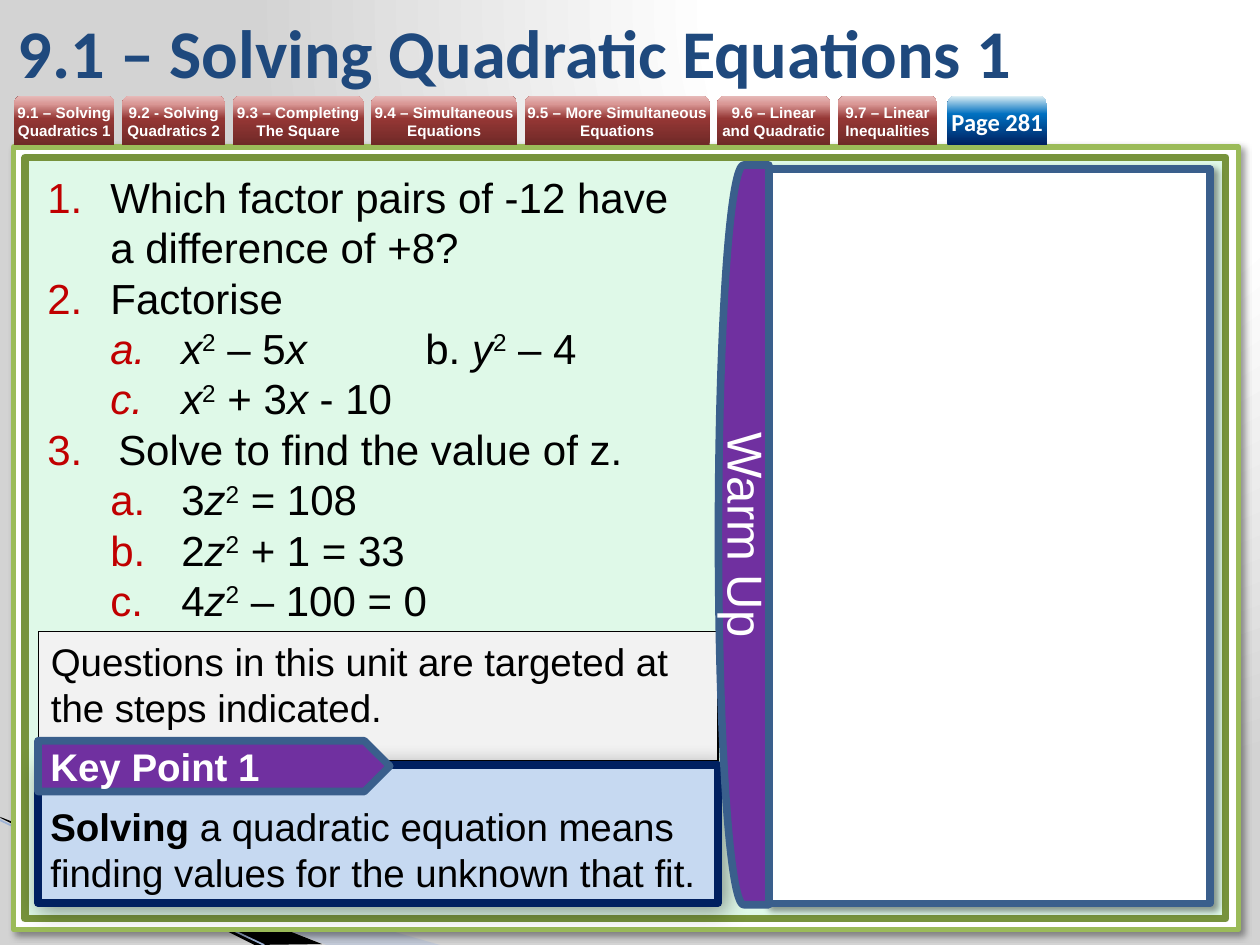
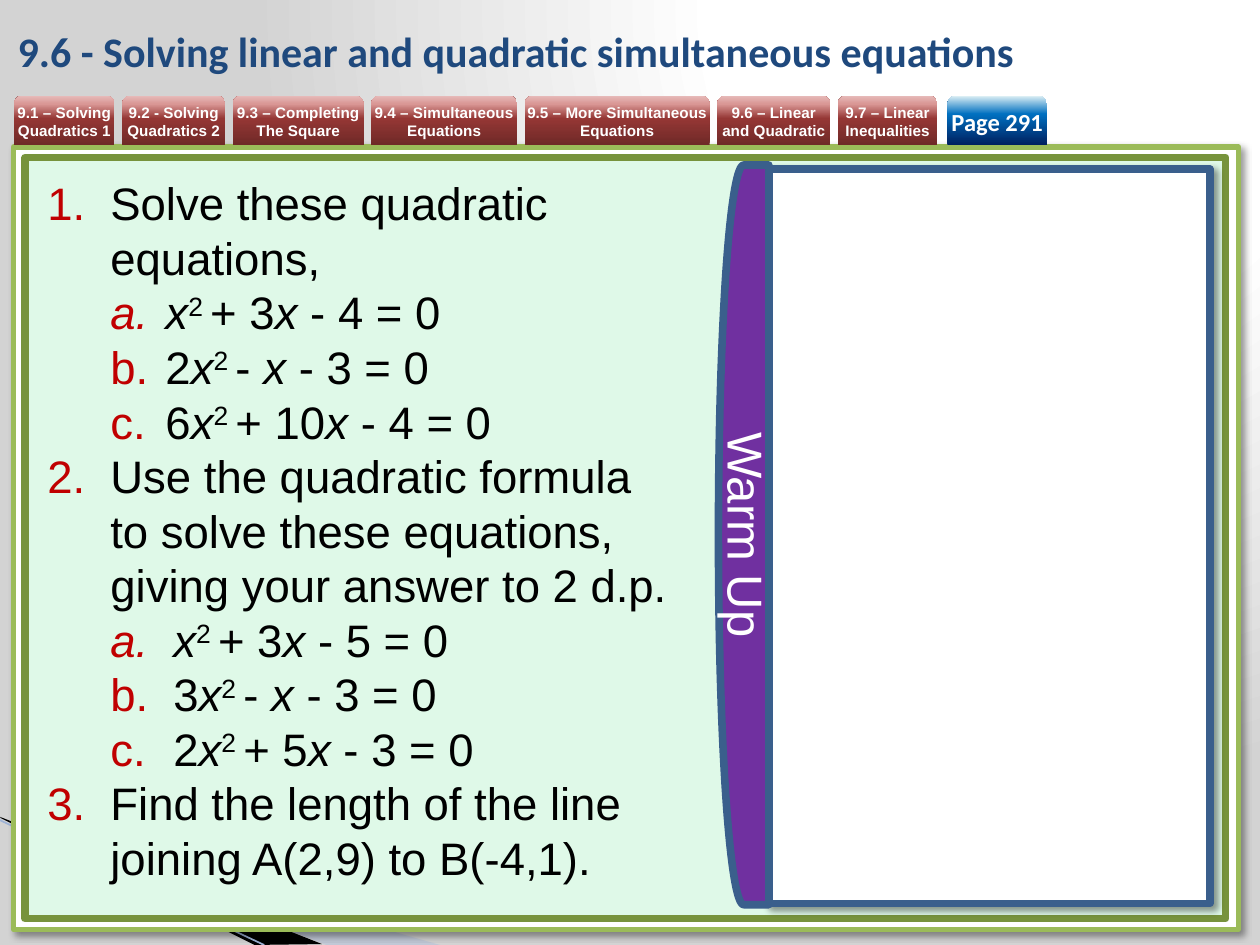
import dataclasses

import lxml.etree
import pptx
import pptx.dml.color
import pptx.enum.shapes
import pptx.enum.text
import pptx.oxml.ns
import pptx.util

Pt = pptx.util.Pt
Preset = pptx.enum.shapes.MSO_SHAPE
Align = pptx.enum.text.PP_ALIGN
Anchor = pptx.enum.text.MSO_ANCHOR
qn = pptx.oxml.ns.qn


@dataclasses.dataclass(frozen=True)
class Theme:
    body_font: str = "Arial"
    title_font: str = "Calibri"
    black: str = "000000"
    white: str = "FFFFFF"
    title: str = "1F497D"
    number: str = "C00000"
    panel_edge: str = "9BBB59"
    board: str = "DFF9E8"
    board_edge: str = "77933C"
    purple: str = "7030A0"
    steel: str = "3A5F8C"
    note: str = "F2F2F2"
    key: str = "C6D9F1"
    navy: str = "002060"
    sweep: str = "A7B9DB"
    sweep_edge: str = "9EB3D6"
    backdrop: tuple = ((0, "FFFFFF"), (40, "FFFFFF"), (100, "D3D3D3"))
    red_tab: tuple = ((0, "6F2927"), (54, "953735"), (83, "D99694"), (100, "E6B9B8"))
    blue_tab: tuple = ((0, "002060"), (63, "0070C0"), (100, "DBEEF4"))
    tab_size: float = 8.7
    page_size: float = 14
    note_size: float = 22
    banner_size: float = 28
    thick: float = 4.33


LESSON_TABS = (
    ("9.1 – Solving Quadratics 1", 57.6),
    ("9.2 - Solving Quadratics 2", 59),
    ("9.3 – Completing The Square", 74.9),
    ("9.4 – Simultaneous Equations", 83.5),
    ("9.5 – More Simultaneous Equations", 105.8),
    ("9.6 – Linear and Quadratic", 64.8),
    ("9.7 – Linear Inequalities", 56.9),
)
TAB_LEFT, TAB_TOP, TAB_HEIGHT, TAB_GAP = 8, 54.8, 28, 4.2
PAGE_TAB_LEFT, PAGE_TAB_WIDTH = 541.4, 56.9


def rgb(value):
    return pptx.dml.color.RGBColor.from_string(value)


def child(parent, tag, **attributes):
    values = {name: str(value) for name, value in attributes.items()}
    return lxml.etree.SubElement(parent, qn(tag), values)


def gradient(parent, stops):
    fill = lxml.etree.Element(qn("a:gradFill"), rotWithShape="1")
    stop_list = child(fill, "a:gsLst")
    for position, color in stops:
        stop = child(stop_list, "a:gs", pos=position * 1000)
        child(stop, "a:srgbClr", val=color)
    parent.replace(parent.find(qn("a:solidFill")), fill)
    return fill


class Deck:
    def __init__(self, theme):
        self.theme = theme
        self.presentation = pptx.Presentation()
        self.presentation.slide_width = Pt(720)
        self.presentation.slide_height = Pt(540)
        self.slide = None

    def new_slide(self):
        layout = self.presentation.slide_layouts[6]
        self.slide = self.presentation.slides.add_slide(layout)
        self.slide.background.fill.solid()
        background = next(self.slide.element.iter(qn("p:bgPr")))
        shade = child(gradient(background, self.theme.backdrop), "a:path", path="circle")
        child(shade, "a:fillToRect", l=65000, b=98000)

    def shape(self, preset, box, fill, edge=None, width=None, blur=None):
        shape = self.slide.shapes.add_shape(preset, *map(Pt, box))
        self.paint(shape, fill, edge, width)
        if blur:
            effects = shape._element.spPr.find(qn("a:effectLst"))
            shadow = child(effects, "a:outerShdw", blurRad=Pt(blur), dist=Pt(3),
                           dir=45 * 60000, algn="tl", rotWithShape=0)
            child(child(shadow, "a:srgbClr", val=self.theme.black), "a:alpha", val=40000)
        return shape

    def paint(self, shape, fill, edge=None, width=None):
        shape.shadow.inherit = False
        shape.fill.solid()
        if isinstance(fill, str):
            shape.fill.fore_color.rgb = rgb(fill)
        else:
            shade = gradient(shape._element.spPr, fill)
            child(shade, "a:lin", ang=270 * 60000, scaled=0)
        if edge:
            shape.line.color.rgb = rgb(edge)
            shape.line.width = Pt(width)
            child(shape._element.spPr.find(qn("a:ln")), "a:round")
        else:
            shape.line.fill.background()

    def polygon(self, points, fill, opacity=None):
        start, *others = [(Pt(x), Pt(y)) for x, y in points]
        builder = self.slide.shapes.build_freeform(*start)
        builder.add_line_segments(others, close=True)
        shape = builder.convert_to_shape()
        self.paint(shape, fill)
        if opacity:
            color = shape._element.spPr.find(qn("a:solidFill"))[0]
            child(color, "a:alpha", val=opacity * 1000)

    def line(self, start, end, color, width):
        connector = self.slide.shapes.add_connector(
            pptx.enum.shapes.MSO_CONNECTOR.STRAIGHT, *map(Pt, start + end))
        connector.line.color.rgb = rgb(color)
        connector.line.width = Pt(width)
        child(connector._element.spPr, "a:effectLst")

    def text_box(self, box):
        shape = self.slide.shapes.add_textbox(*map(Pt, box))
        shape.text_frame.word_wrap = True
        return shape

    def first_paragraph(self, shape, align=Align.LEFT, anchor=Anchor.MIDDLE, insets=None):
        frame = shape.text_frame
        frame.vertical_anchor = anchor
        if insets:
            (frame.margin_left, frame.margin_top,
             frame.margin_right, frame.margin_bottom) = map(Pt, insets)
        paragraph = frame.paragraphs[0]
        paragraph.alignment = align
        return paragraph

    def runs(self, paragraph, markup, size, color, bold=False, font=None):
        for italic, piece in enumerate(markup.split("*")):
            for raised, text in enumerate(piece.split("^")):
                if not text:
                    continue
                run = paragraph.add_run()
                run.text = text
                run.font.name = font or self.theme.body_font
                run.font.size = Pt(size)
                run.font.color.rgb = rgb(color)
                run.font.bold = bold
                run.font.italic = bool(italic % 2)
                if raised % 2:
                    run._r.get_or_add_rPr().set("baseline", "30000")

    def tab(self, left, width, fill, text, size, font=None, spacing=None):
        shape = self.shape(Preset.ROUND_2_SAME_RECTANGLE,
                           (left, TAB_TOP, width, TAB_HEIGHT), fill)
        paragraph = self.first_paragraph(shape, Align.CENTER, insets=(0, 0, 0, 0))
        if spacing:
            paragraph.line_spacing = Pt(spacing)
        self.runs(paragraph, text, size, self.theme.white, True, font)

    def frame(self, title, title_size, page):
        theme = self.theme
        self.new_slide()
        self.polygon([(0, 468), (251.5, 540), (186.5, 540), (0, 467.5)], theme.sweep, 40)
        self.polygon([(0, 466.8), (184, 539.5), (145.5, 540), (0.5, 467.5)], theme.black)
        self.line((0, 468.7), (151, 540), theme.sweep_edge, 0.95)
        self.shape(Preset.RECTANGLE, (7.8, 84, 700, 447), theme.white, theme.panel_edge, 3, 4)
        self.shape(Preset.RECTANGLE, (14.4, 90, 686, 435), theme.board,
                   theme.board_edge, theme.thick)
        self.shape(Preset.RECTANGLE, (439.4, 96.6, 252, 419.6), theme.white,
                   theme.steel, theme.thick, 4)
        left = TAB_LEFT
        for text, width in LESSON_TABS:
            self.tab(left, width, theme.red_tab, text, theme.tab_size, spacing=10)
            left += width + TAB_GAP
        self.tab(PAGE_TAB_LEFT, PAGE_TAB_WIDTH, theme.blue_tab, f"Page {page}",
                 theme.page_size, theme.title_font)
        heading = self.first_paragraph(self.text_box((3, 3.6, 595.5, 51)))
        self.runs(heading, title, title_size, theme.title, True, theme.title_font)

    def questions(self, box, size, tab_stops, items):
        shape = self.text_box(box)
        frame = shape.text_frame
        frame.auto_size = pptx.enum.text.MSO_AUTO_SIZE.SHAPE_TO_FIT_TEXT
        for index, (level, margin, hanging, markup, *start) in enumerate(items):
            paragraph = frame.add_paragraph() if index else frame.paragraphs[0]
            paragraph.level = level
            properties = paragraph._p.get_or_add_pPr()
            properties.set("marL", str(Pt(margin)))
            properties.set("indent", str(-Pt(hanging)))
            child(child(properties, "a:buClr"), "a:srgbClr", val=self.theme.number)
            numbering = child(properties, "a:buAutoNum",
                              type="alphaLcPeriod" if level else "arabicPeriod")
            if start:
                numbering.set("startAt", str(start[0]))
            stops = child(properties, "a:tabLst")
            for stop in tab_stops:
                child(stops, "a:tab", pos=Pt(stop), algn="l")
            self.runs(paragraph, markup, size, self.theme.black)

    def note(self, box, text):
        theme = self.theme
        shape = self.shape(Preset.RECTANGLE, box, theme.note, theme.black, 0.75)
        paragraph = self.first_paragraph(shape, anchor=Anchor.TOP)
        self.runs(paragraph, text, theme.note_size, theme.black)

    def key_point(self, box, label, term, text):
        theme = self.theme
        left, top = box[:2]
        body = self.shape(Preset.RECTANGLE, box, theme.key, theme.navy, theme.thick, 13)
        paragraph = self.first_paragraph(body, anchor=Anchor.TOP, insets=(7.2, 21.6, 7.2, 3.6))
        self.runs(paragraph, term, theme.note_size, theme.black, True)
        self.runs(paragraph, text, theme.note_size, theme.black)
        flag = self.shape(Preset.PENTAGON, (left, top - 14, 201, 29), theme.purple,
                          theme.steel, theme.thick)
        self.runs(self.first_paragraph(flag), label, theme.note_size, theme.white, True)

    def banner(self, text):
        theme = self.theme
        shape = self.shape(Preset.FLOWCHART_DELAY, (410.6, 94.3, 28.8, 422.7),
                           theme.purple, theme.steel, theme.thick)
        shape._element.spPr.find(qn("a:xfrm")).set("flipH", "1")
        shape.text_frame._txBody.bodyPr.set("vert", "vert")
        paragraph = self.first_paragraph(shape, Align.CENTER)
        self.runs(paragraph, text, theme.banner_size, theme.white)


def main():
    deck = Deck(Theme())

    deck.frame("9.1 – Solving Quadratic Equations 1", 39, 281)
    deck.questions((20, 94.3, 385, 269), 24, (85, 216), (
        (0, 36, 36, "Which factor pairs of -12 have a difference of +8?"),
        (0, 36, 36, "Factorise"),
        (1, 76.5, 40.5, "*x*^2^ – 5*x*\tb. *y*^2^ – 4"),
        (1, 76.5, 40.5, "*x*^2^ + 3*x* - 10", 3),
        (0, 40.5, 40.5, "Solve to find the value of z."),
        (1, 76.5, 40.5, "3*z*^2^ = 108"),
        (1, 76.5, 40.5, "2*z*^2^ + 1 = 33"),
        (1, 76.5, 40.5, "4*z*^2^ – 100 = 0", 3),
    ))
    deck.note((22, 360.8, 388.4, 74), "Questions in this unit are targeted at the steps indicated.")
    deck.key_point((21.7, 437.3, 388.7, 78.7), "Key Point 1", "Solving",
                   " a quadratic equation means finding values for the unknown that fit.")
    deck.banner("Warm Up")

    deck.frame("9.6 - Solving linear and quadratic simultaneous equations", 24, 291)
    deck.questions((20, 96.6, 374.5, 417), 26, (202.5,), (
        (0, 36, 36, "Solve these quadratic equations,"),
        (1, 67.5, 31.5, "*x*^2 ^+ 3*x *- 4 = 0"),
        (1, 67.5, 31.5, "2*x*^2 ^- *x *- 3 = 0"),
        (1, 67.5, 31.5, "6*x*^2 ^+ 10*x *- 4 = 0"),
        (0, 36, 36, "Use the quadratic formula to solve these equations, "
                    "giving your answer to 2 d.p."),
        (1, 72, 36, "*x*^2 ^+ 3*x* - 5 = 0"),
        (1, 72, 36, "3*x*^2 ^- *x* - 3 = 0"),
        (1, 72, 36, "2*x*^2 ^+ 5*x *- 3 = 0"),
        (0, 36, 36, "Find the length of the line joining A(2,9) to B(-4,1)."),
    ))
    deck.banner("Warm Up")

    deck.presentation.save("out.pptx")


if __name__ == "__main__":
    main()
